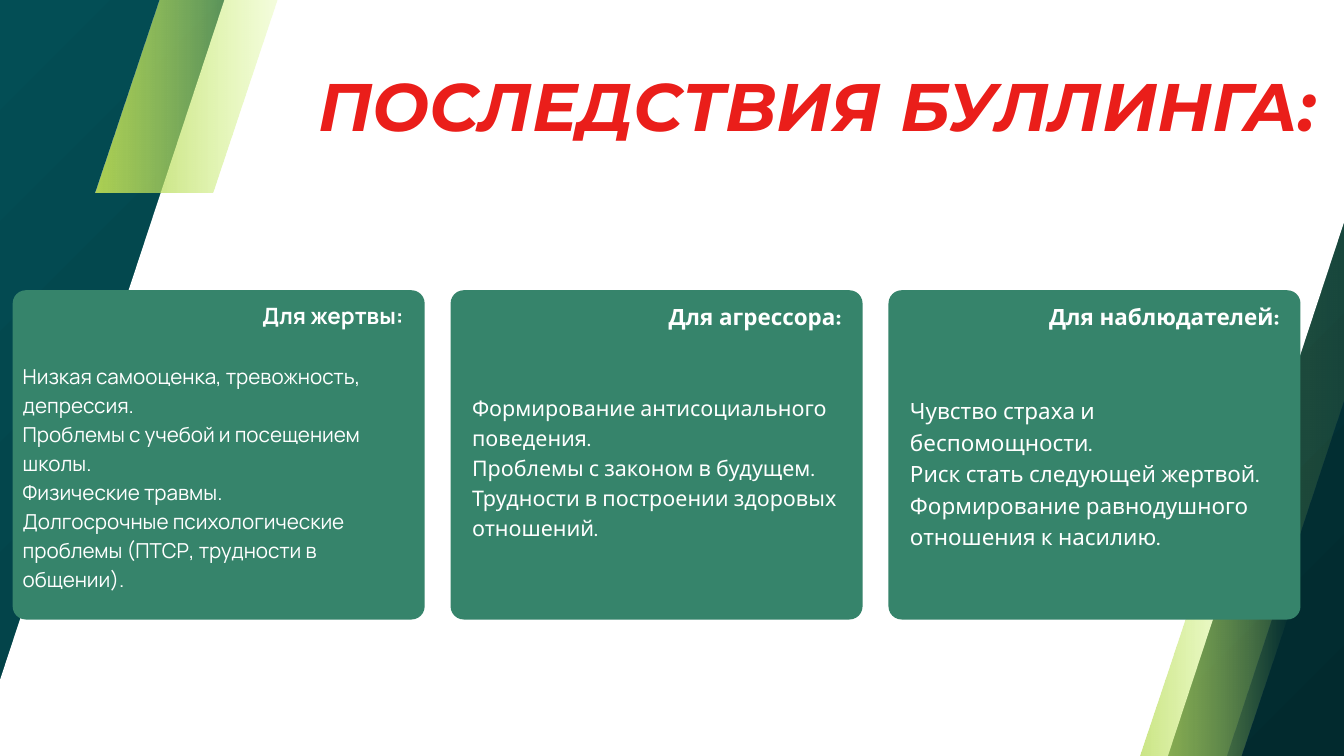
from pptx import Presentation
from pptx.dml.color import RGBColor
from pptx.enum.shapes import MSO_SHAPE
from pptx.enum.text import MSO_ANCHOR, MSO_AUTO_SIZE, PP_ALIGN
from pptx.oxml.ns import qn
from pptx.util import Pt
from lxml import etree

ROUND, SLANT = MSO_SHAPE.ROUNDED_RECTANGLE, MSO_SHAPE.PARALLELOGRAM
LEFT, RIGHT = PP_ALIGN.LEFT, PP_ALIGN.RIGHT
TOP, NO_FIT = MSO_ANCHOR.TOP, MSO_AUTO_SIZE.NONE

COLORS = {
    "teal": "034E55", "night": "022A2E", "olive": "AFD255", "lime": "D8FF72",
    "white": "FFFFFF", "red": "EA1E1A", "card": "36846B",
}

# Each card: font, text box inset, head (size, line), body (size, line), gap, text
CARDS = [
    dict(font="Manrope", inset=(10.8, 7.2, 408.2, 345), head=(24.1, 33.8),
         body=(22.1, 31), gap=33.8, title="Для жертвы:",
         items=["Низкая самооценка, тревожность, депрессия.",
                "Проблемы с учебой и посещением школы.",
                "Физические травмы.",
                "Долгосрочные психологические проблемы "
                "(ПТСР, трудности в общении)."]),
    dict(font="Karla", inset=(23, 9.4, 396, 252), head=(24, 33.6),
         body=(23, 32.2), gap=64.4, title="Для агрессора:",
         items=["Формирование антисоциального поведения.",
                "Проблемы с законом в будущем.",
                "Трудности в построении здоровых отношений."]),
    dict(font="Karla", inset=(23, 9.4, 396, 293), head=(24, 33.6),
         body=(24, 33.6), gap=67.2, title="Для наблюдателей:",
         items=["Чувство страха и беспомощности.",
                "Риск стать следующей жертвой.",
                "Формирование равнодушного отношения к насилию."]),
]


def rgb(name):
    return RGBColor.from_string(COLORS[name])


def blend(fill, names, angle):
    fill.gradient()
    fill.gradient_angle = angle
    for stop, name in zip(fill.gradient_stops, names):
        stop.color.rgb = rgb(name)


def add_shape(slide, kind, box, adjust, color=None):
    """Add a plain shape; without a colour it fades from olive to clear."""
    shape = slide.shapes.add_shape(kind, *map(Pt, box))
    shape.adjustments[0] = adjust
    shape.shadow.inherit = False
    shape.line.fill.background()
    if color:
        shape.fill.solid()
        shape.fill.fore_color.rgb = rgb(color)
    else:
        blend(shape.fill, ("olive", "lime"), 0)
        last = list(shape.element.spPr.iter(qn("a:srgbClr")))[-1]
        etree.SubElement(last, qn("a:alpha"), val="0")


def set_frame(frame):
    frame.word_wrap = True
    frame.auto_size = NO_FIT
    frame.vertical_anchor = TOP
    frame.margin_left = frame.margin_right = 0
    frame.margin_top = frame.margin_bottom = 0


def style(para, font, size, line, color, align=LEFT, bold=False, italic=False):
    para.alignment = align
    para.line_spacing = Pt(line)
    for run in para.runs:
        run.font.name = font
        run.font.size = Pt(size)
        run.font.bold = bold
        run.font.italic = italic
        run.font.color.rgb = rgb(color)


def add_backdrop(slide):
    """Dark ground, white slanted sheet and green bands."""
    blend(slide.background.fill, ("teal", "night"), 315)
    add_shape(slide, SLANT, (80.6, -45.4, 1515, 928.8), 0.33)
    add_shape(slide, SLANT, (-51.1, -45.4, 1584.7, 928.8), 0.33, "white")
    add_shape(slide, SLANT, (1167.1, 647.3, 216.7, 325.4), 0.5)
    add_shape(slide, SLANT, (102.2, -171.4, 252, 378), 0.5)


def add_title(slide, box, text):
    title = slide.shapes.title
    title.left, title.top, title.width, title.height = map(Pt, box)
    slide.shapes.element.append(title.element)  # bring in front of the backdrop
    set_frame(title.text_frame)
    title.text_frame.text = text
    style(title.text_frame.paragraphs[0], "Montserrat", 72, 71.3, "red",
          RIGHT, True, True)


def add_card(slide, box, card):
    left, top, width, height = box
    add_shape(slide, ROUND, box, 0.04, "card")
    dx, dy, wide, high = card["inset"]
    label = slide.shapes.add_textbox(
        Pt(left + dx), Pt(top + dy), Pt(wide), Pt(high))
    frame = label.text_frame
    set_frame(frame)
    frame.text = "\n".join([card["title"], *card["items"]])
    head, *body = frame.paragraphs
    style(head, card["font"], *card["head"], "white", RIGHT, True)
    for para in body:
        style(para, card["font"], *card["body"], "white")
    body[0].space_before = Pt(card["gap"])


def main():
    deck = Presentation()
    deck.slide_width, deck.slide_height = Pt(1440), Pt(810)
    slide = deck.slides.add_slide(deck.slide_layouts[5])
    add_backdrop(slide)
    add_title(slide, (178, 83.5, 1232.6, 146), "ПОСЛЕДСТВИЯ БУЛЛИНГА:")
    for i, card in enumerate(CARDS):
        add_card(slide, (13.6 + 469.2 * i, 311, 441.4, 352.8), card)
    deck.save("out.pptx")


if __name__ == "__main__":
    main()
